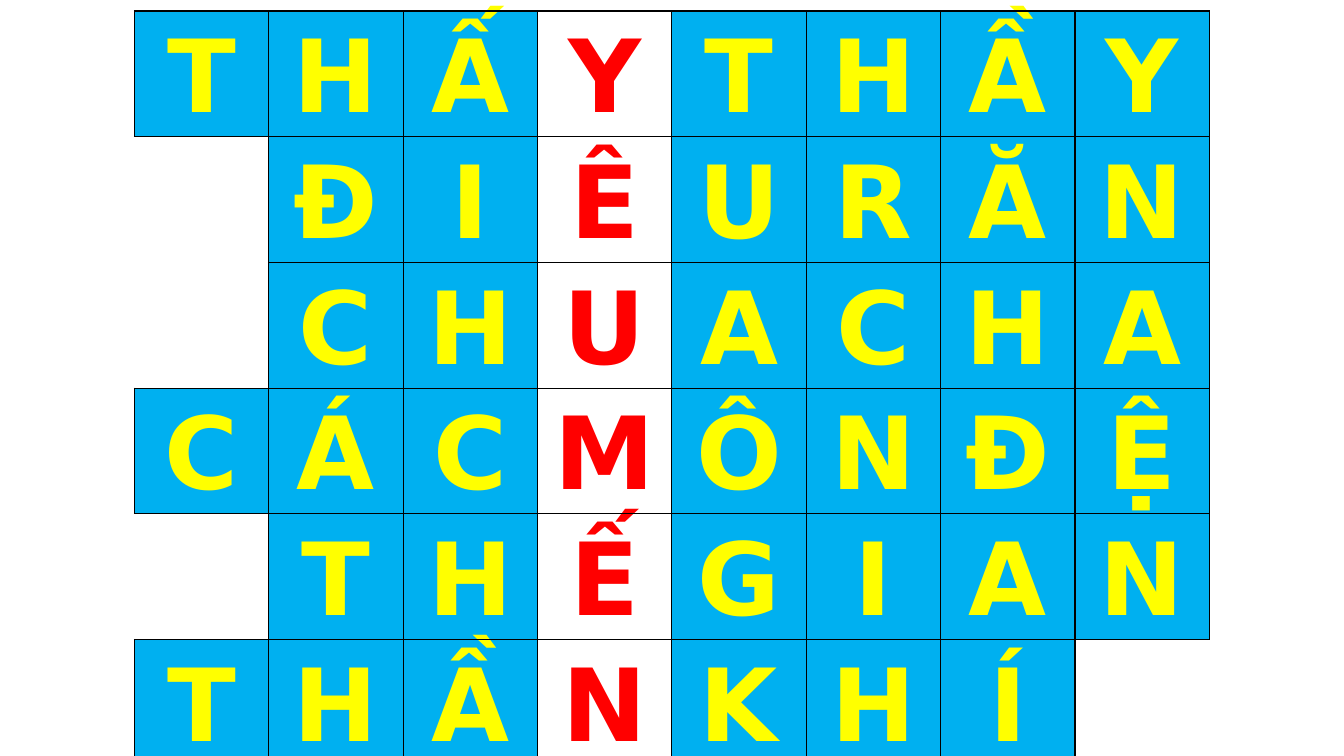
import pptx
import pptx.dml.color
import pptx.enum.text
import pptx.oxml
import pptx.oxml.ns
import pptx.util

COLORS = {
    "tile": "00B0F0",
    "letter": "FFFF00",
    "key_tile": "FFFFFF",
    "key_letter": "FF0000",
    "border": "000000",
}
ANSWERS = [
    " THẤYTHẦY ",
    "  ĐIÊURĂN ",
    "  CHUACHA ",
    " CÁCMÔNĐỆ ",
    "  THẾGIAN ",
    " THẦNKHÍ  ",
]
KEY_COLUMN = 4
SLIDE_WIDTH = pptx.util.Inches(13.33)
SLIDE_HEIGHT = pptx.util.Inches(7.5)
BOARD_TOP = pptx.util.Inches(0.11)
BOARD_HEIGHT = pptx.util.Inches(7.29)
SIDES = {"lnL": (0, -1), "lnR": (0, 1), "lnT": (-1, 0), "lnB": (1, 0)}
CELL_FORMAT = {
    "margin_left": pptx.util.Inches(0.07),
    "margin_right": pptx.util.Inches(0.07),
    "margin_top": 0,
    "margin_bottom": 0,
    "vertical_anchor": pptx.enum.text.MSO_ANCHOR.MIDDLE,
}
PARAGRAPH_FORMAT = {
    "alignment": pptx.enum.text.PP_ALIGN.CENTER,
    "line_spacing": 1.07,
}
FONT_FORMAT = {"name": "DejaVu Sans", "size": pptx.util.Pt(72), "bold": True}
TABLE_FORMAT = {"first_row": False, "horz_banding": False}


def apply_format(target, values):
    for name, value in values.items():
        setattr(target, name, value)


def color(name):
    return pptx.dml.color.RGBColor.from_string(COLORS[name])


def has_letter(row, column):
    inside = 0 <= row < len(ANSWERS) and 0 <= column < len(ANSWERS[0])
    return inside and ANSWERS[row][column] != " "


def add_borders(cell, row, column):
    properties = cell._tc.get_or_add_tcPr()
    namespace = pptx.oxml.ns.nsdecls("a")
    for side, (down, right) in SIDES.items():
        visible = has_letter(row, column) or has_letter(row + down, column + right)
        fill = (
            f'<a:solidFill><a:srgbClr val="{COLORS["border"]}"/></a:solidFill>'
            if visible
            else "<a:noFill/>"
        )
        properties.append(
            pptx.oxml.parse_xml(
                f'<a:{side} {namespace} w="{pptx.util.Pt(1)}">{fill}</a:{side}>'
            )
        )


def write_letter(cell, letter, prefix):
    cell.fill.solid()
    cell.fill.fore_color.rgb = color(prefix + "tile")
    paragraph = cell.text_frame.paragraphs[0]
    apply_format(paragraph, PARAGRAPH_FORMAT)
    run = paragraph.add_run()
    run.text = letter
    apply_format(run.font, FONT_FORMAT)
    run.font.color.rgb = color(prefix + "letter")


def add_crossword(slide):
    table = slide.shapes.add_table(
        len(ANSWERS), len(ANSWERS[0]), 0, BOARD_TOP, SLIDE_WIDTH, BOARD_HEIGHT
    ).table
    apply_format(table, TABLE_FORMAT)
    for row, answer in enumerate(ANSWERS):
        for column, letter in enumerate(answer):
            cell = table.cell(row, column)
            apply_format(cell, CELL_FORMAT)
            add_borders(cell, row, column)
            if has_letter(row, column):
                write_letter(cell, letter, "key_" if column == KEY_COLUMN else "")
            else:
                cell.fill.background()


def main():
    presentation = pptx.Presentation()
    apply_format(
        presentation, {"slide_width": SLIDE_WIDTH, "slide_height": SLIDE_HEIGHT}
    )
    slide = presentation.slides.add_slide(presentation.slide_layouts[6])
    add_crossword(slide)
    presentation.save("out.pptx")


if __name__ == "__main__":
    main()
